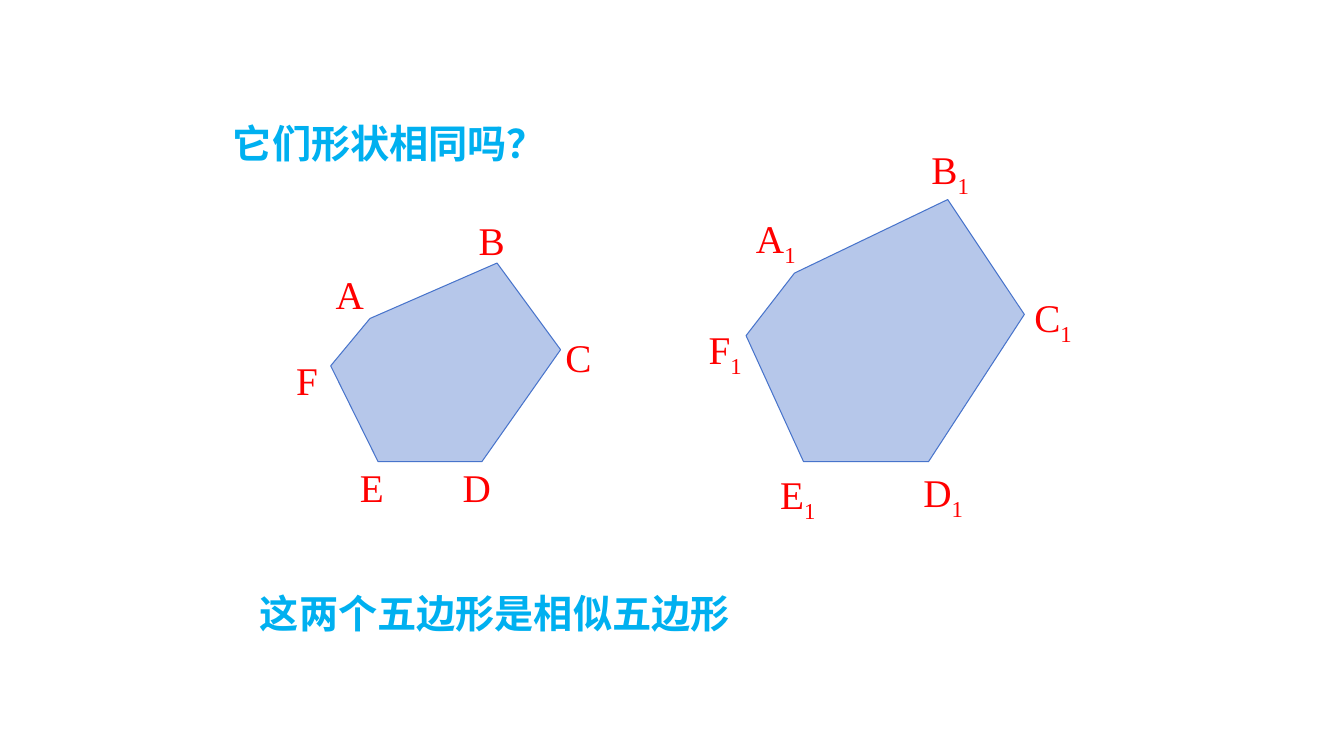
from dataclasses import dataclass

from lxml.etree import SubElement
from pptx import Presentation
from pptx.dml.color import RGBColor
from pptx.enum.text import MSO_ANCHOR, MSO_AUTO_SIZE, PP_ALIGN
from pptx.oxml.ns import qn
from pptx.shapes.autoshape import Shape
from pptx.slide import Slide
from pptx.util import Inches, Pt

RED = "FF0000"
SKY = "00B0F0"
FILL = "B6C7EA"
OUTLINE = "4874CB"
FONT = "Times New Roman"
LABEL_WIDTH = 0.87
LINE_HEIGHT = 0.57


@dataclass(frozen=True)
class Vertex:
    """A corner of a polygon and the top left of its label, in inches."""
    letter: str
    x: float
    y: float
    label_left: float
    label_top: float


@dataclass(frozen=True)
class Polygon:
    vertices: tuple[Vertex, ...]
    subscript: str = ""


POLYGONS = (
    Polygon((
        Vertex("A", 3.67, 3.16, 3.23, 2.63),
        Vertex("B", 4.93, 2.61, 4.65, 2.10),
        Vertex("C", 5.56, 3.47, 5.51, 3.26),
        Vertex("D", 4.78, 4.58, 4.49, 4.55),
        Vertex("E", 3.75, 4.58, 3.47, 4.55),
        Vertex("F", 3.28, 3.63, 2.84, 3.49),
    )),
    Polygon((
        Vertex("A", 7.88, 2.71, 7.40, 2.08),
        Vertex("B", 9.40, 1.98, 9.14, 1.39),
        Vertex("C", 10.16, 3.12, 10.16, 2.86),
        Vertex("D", 9.21, 4.58, 9.06, 4.60),
        Vertex("E", 7.97, 4.58, 7.64, 4.62),
        Vertex("F", 7.40, 3.33, 6.93, 3.18),
    ), subscript="1"),
)


def color(value: str) -> RGBColor:
    return RGBColor.from_string(value)


def add_label_box(slide: Slide, left: float, top: float, width: float) -> Shape:
    return slide.shapes.add_textbox(
        Inches(left), Inches(top), Inches(width), Inches(LINE_HEIGHT))


def write_text(box: Shape, text: str, text_color: str, bold: bool = False,
               subscript: str = "") -> None:
    frame = box.text_frame
    frame.word_wrap = True
    frame.auto_size = MSO_AUTO_SIZE.SHAPE_TO_FIT_TEXT
    frame.vertical_anchor = MSO_ANCHOR.TOP
    para = frame.paragraphs[0]
    para.alignment = PP_ALIGN.LEFT
    para.font.name = FONT
    para.font.size = Pt(28)
    para.font.bold = bold
    para.font.color.rgb = color(text_color)
    set_space_before(para._p.get_or_add_pPr(), 50)
    para.add_run().text = text
    if subscript:
        span = para.add_run()
        span.text = subscript
        span.font._element.set("baseline", "-25000")


def set_space_before(properties, percent: int) -> None:
    """Set paragraph spacing relative to the line height."""
    spacing = SubElement(properties, qn("a:spcBef"))
    SubElement(spacing, qn("a:spcPct")).set("val", str(percent * 1000))
    properties.insert(0, spacing)


def draw_polygon(slide: Slide, polygon: Polygon) -> None:
    start, *others = [(Inches(vertex.x), Inches(vertex.y))
                      for vertex in polygon.vertices]
    builder = slide.shapes.build_freeform(*start)
    builder.add_line_segments(others, close=True)
    shape = builder.convert_to_shape()
    shape.shadow.inherit = False
    shape.fill.solid()
    shape.fill.fore_color.rgb = color(FILL)
    shape.line.color.rgb = color(OUTLINE)
    shape.line.width = Pt(0.75)


def label_vertices(slide: Slide, polygon: Polygon) -> None:
    for vertex in polygon.vertices:
        box = add_label_box(slide, vertex.label_left, vertex.label_top, LABEL_WIDTH)
        write_text(box, vertex.letter, RED, subscript=polygon.subscript)


def main() -> None:
    deck = Presentation()
    deck.slide_width = Inches(13.33)
    deck.slide_height = Inches(7.5)
    title_only = deck.slide_layouts.get_by_name("Title Only")
    page = deck.slides.add_slide(title_only)

    question = page.shapes.title
    question.left, question.top = Inches(2.21), Inches(1.13)
    question.width, question.height = Inches(5.75), Inches(LINE_HEIGHT)
    write_text(question, "它们形状相同吗？", SKY, bold=True)

    for polygon in POLYGONS:
        draw_polygon(page, polygon)
        label_vertices(page, polygon)

    answer = add_label_box(page, 2.48, 5.8, 7.8)
    write_text(answer, "这两个五边形是相似五边形", SKY, bold=True)

    deck.save("out.pptx")


if __name__ == "__main__":
    main()
